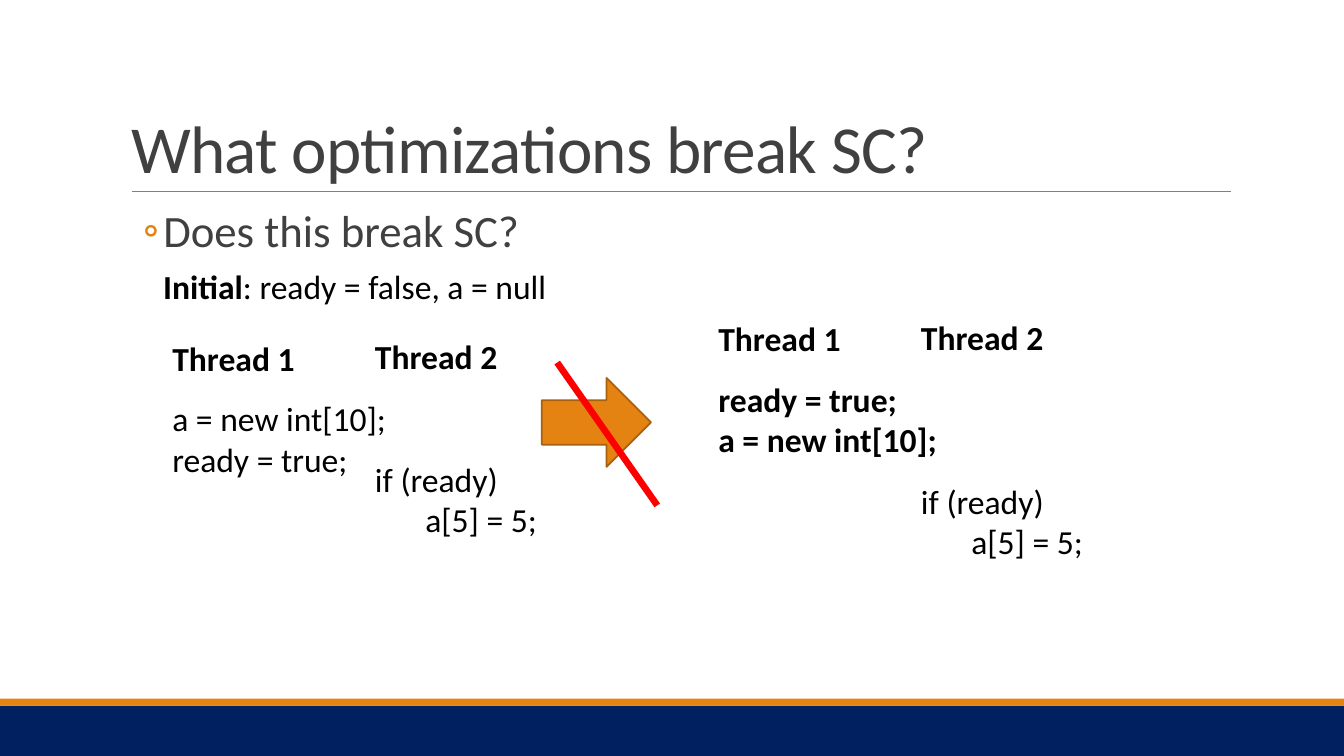
from lxml import etree
from pptx import Presentation
from pptx.dml.color import RGBColor
from pptx.enum.shapes import MSO_CONNECTOR as Connector, MSO_SHAPE as Shape
from pptx.enum.text import MSO_ANCHOR as Anchor, MSO_AUTO_SIZE as AutoSize, PP_ALIGN as Align
from pptx.oxml.ns import qn
from pptx.util import Pt

# Content
TITLE = "What optimizations break SC?"
QUESTION = "Does this break SC?"
INITIAL = ("Initial", ": ready = false, a = null")
READER_CODE = ["if (ready)", "\ta[5] = 5;"]
# Each program: left, top, bold writer code, then (heading, code, gap, width, height) per thread
PROGRAMS = [
    (116, 237.5, False, [
        ("Thread 1", ["a = new int[10];", "ready = true;"], 14.65, 170, 109),
        ("Thread 2", READER_CODE, 58.6, 145, 153)]),
    (506, 223.75, True, [
        ("Thread 1", ["ready = true;", "a = new int[10];"], 14.65, 187, 138),
        ("Thread 2", READER_CODE, 87.9, 145, 181)]),
]
THREAD_STEP = 144.75
CODE_INDENT = 36

# Look
FONT = "Calibri"
NAVY, ORANGE, DARK_ORANGE = "002060", "E48312", "A9610D"
BLACK, DARK_GRAY, GRAY, RED = "000000", "404040", "808080", "FF0000"
WIDTH, HEIGHT = 960, 540


def color(hex_code):
    return RGBColor.from_string(hex_code)


def add_run(paragraph, text, size=24, ink=BLACK, bold=False, tracking=None):
    run = paragraph.add_run()
    run.text = text
    run.font.name, run.font.size, run.font.bold = FONT, Pt(size), bold
    run.font.color.rgb = color(ink)
    if tracking is not None:
        run.font._element.set("spc", str(round(tracking * 100)))


def add_text_box(left, top, width, height):
    box = slide.shapes.add_textbox(Pt(left), Pt(top), Pt(width), Pt(height))
    box.text_frame.word_wrap = True
    box.text_frame.auto_size = AutoSize.SHAPE_TO_FIT_TEXT
    return box.text_frame


def place(placeholder, left, top, width, height, anchor):
    placeholder.left, placeholder.top = Pt(left), Pt(top)
    placeholder.width, placeholder.height = Pt(width), Pt(height)
    frame = placeholder.text_frame
    frame.word_wrap, frame.auto_size, frame.vertical_anchor = True, AutoSize.NONE, anchor
    paragraph = frame.paragraphs[0]
    paragraph.alignment = Align.LEFT
    paragraph.space_before = Pt(0)
    return frame, paragraph


def add_block(kind, left, top, width, height, fill, outline=None):
    block = slide.shapes.add_shape(kind, Pt(left), Pt(top), Pt(width), Pt(height))
    block.shadow.inherit = False
    block.fill.solid()
    block.fill.fore_color.rgb = color(fill)
    if outline:
        block.line.color.rgb = color(outline)
        block.line.width = Pt(1.25)
    else:
        block.line.fill.background()


def add_line(x1, y1, x2, y2, ink, weight):
    line = slide.shapes.add_connector(Connector.STRAIGHT, Pt(x1), Pt(y1), Pt(x2), Pt(y2))
    line.line.color.rgb = color(ink)
    line.line.width = Pt(weight)
    etree.SubElement(line._element.spPr, qn("a:effectLst"))


deck = Presentation()
deck.slide_width, deck.slide_height = Pt(WIDTH), Pt(HEIGHT)
slide = deck.slides.add_slide(deck.slide_layouts[1])

# Footer bands and title rule
add_block(Shape.RECTANGLE, 0, 504, WIDTH, 36, NAVY)
add_block(Shape.RECTANGLE, 0, 499, WIDTH, 5, ORANGE)
add_line(94.25, 136.8, 879, 136.8, GRAY, 0.5)

# Title
_, title = place(slide.shapes.title, 86.4, 22.5, 792, 114.5, Anchor.BOTTOM)
title.line_spacing = 0.85
add_run(title, TITLE, size=48, ink=DARK_GRAY, tracking=-0.5)

# Question with its bullet
body, question = place(slide.placeholders[1], 86.4, 145.5, 792, 63.5, Anchor.TOP)
body.margin_left = body.margin_right = 0
question.level = 1
question.line_spacing, question.space_after = 0.9, Pt(4)
layout = question._p.get_or_add_pPr()
layout.set("marL", str(Pt(30.24)))
layout.set("indent", str(Pt(-14.4)))
bullet_color = etree.SubElement(layout, qn("a:buClr"))
etree.SubElement(bullet_color, qn("a:srgbClr"), val=ORANGE)
etree.SubElement(layout, qn("a:buFont"), typeface=FONT)
etree.SubElement(layout, qn("a:buChar"), char="◦")
add_run(question, QUESTION, size=32, ink=DARK_GRAY)

# Initial state
initial = add_text_box(109.5, 186.5, 345.5, 36).paragraphs[0]
for text, bold in zip(INITIAL, (True, False)):
    add_run(initial, text, bold=bold)

# Threads before and after the reordering
for left, top, writer_bold, threads in PROGRAMS:
    for column, (heading, code, gap, width, height) in enumerate(threads):
        thread = add_text_box(left + column * THREAD_STEP, top - column * 0.75, width, height)
        add_run(thread.paragraphs[0], heading, bold=True)
        for number, code_line in enumerate(code):
            paragraph = thread.add_paragraph()
            if number == 0:
                paragraph.space_before = Pt(gap)
            if code_line.startswith("\t"):
                paragraph._p.get_or_add_pPr().set("marL", str(Pt(CODE_INDENT)))
            add_run(paragraph, code_line.strip(), bold=writer_bold and column == 0)

# Arrow, struck out
add_block(Shape.RIGHT_ARROW, 387, 270, 78, 63.5, ORANGE, outline=DARK_ORANGE)
add_line(398, 259, 469.5, 361, RED, 4.75)

deck.save("out.pptx")
